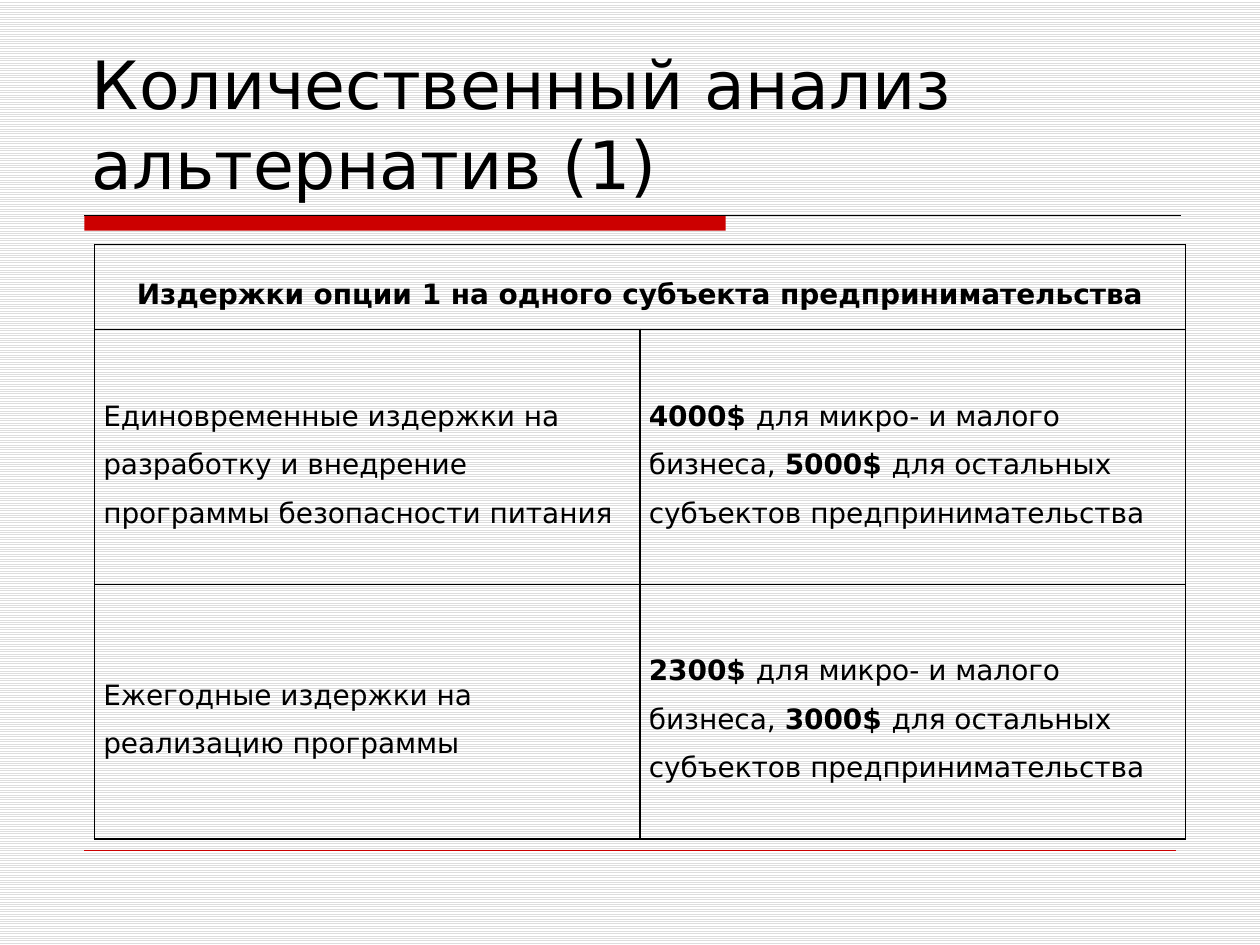
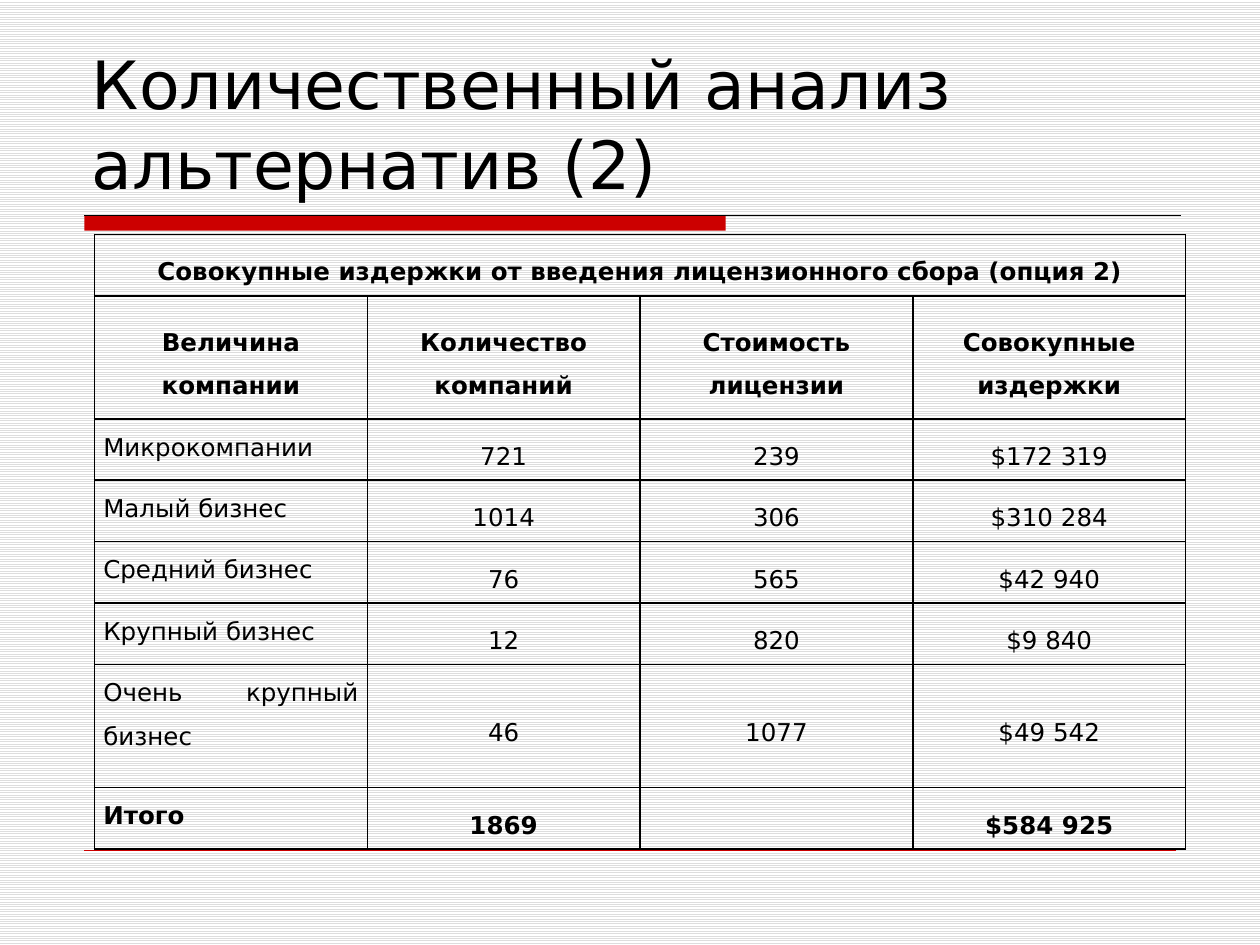
from lxml.etree import SubElement
from pptx import Presentation
from pptx.dml.color import RGBColor
from pptx.enum.dml import MSO_PATTERN
from pptx.enum.shapes import MSO_CONNECTOR, MSO_SHAPE
from pptx.enum.text import MSO_ANCHOR, MSO_AUTO_SIZE, PP_ALIGN
from pptx.oxml import parse_xml
from pptx.oxml.ns import nsdecls, qn
from pptx.util import Inches, Pt

BLACK = RGBColor(0x00, 0x00, 0x00)
WHITE = RGBColor(0xFF, 0xFF, 0xFF)
RED = RGBColor(0xCC, 0x00, 0x00)
STRIPE = RGBColor(0xDD, 0xDD, 0xDD)

FONT = "DejaVu Sans"
MARGIN = Inches(0.67)
BAND_TOP = Inches(1.71)
TABLE_LEFT = Inches(0.75)
TABLE_WIDTH = Inches(8.66)

TITLE_PLACE = {"left": Inches(0.63), "top": Inches(0.33), "width": Inches(8.75), "height": Inches(1.33)}
TITLE_FRAME = {"vertical_anchor": MSO_ANCHOR.BOTTOM, "auto_size": MSO_AUTO_SIZE.NONE, "word_wrap": True}
TITLE_FONT = {"name": FONT, "size": Pt(38), "bold": False}
CELL_MARGINS = {
    "margin_left": Inches(0.07),
    "margin_right": Inches(0.07),
    "margin_top": 0,
    "margin_bottom": 0,
}
PLAIN_TABLE = {"first_row": False, "horz_banding": False}
RULES = [
    (BAND_TOP, Inches(9.37), BLACK, 0.75),
    (Inches(6.75), Inches(9.33), RED, 0.25),
]

CENTERED = (PP_ALIGN.CENTER, MSO_ANCHOR.MIDDLE)
LEFT = (PP_ALIGN.LEFT, MSO_ANCHOR.MIDDLE)
JUSTIFIED = (PP_ALIGN.JUSTIFY, MSO_ANCHOR.TOP)

SLIDES = [
    {
        "title": "Количественный анализ альтернатив (1)",
        "top": 1.94,
        "height": 4.72,
        "shares": [1, 3, 3],
        "size": 16,
        "header_rows": 1,
        "label_style": LEFT,
        "value_style": LEFT,
        "rows": [
            ["*Издержки опции 1 на одного субъекта предпринимательства*", ""],
            [
                "Единовременные издержки на разработку и внедрение программы безопасности питания",
                "*4000$ *для микро- и малого бизнеса, *5000$ *для остальных субъектов предпринимательства",
            ],
            [
                "Ежегодные издержки на реализацию программы",
                "*2300$ *для микро- и малого бизнеса, *3000$ *для остальных субъектов предпринимательства",
            ],
        ],
    },
    {
        "title": "Количественный анализ альтернатив (2)",
        "top": 1.86,
        "height": 4.88,
        "shares": [1, 2, 1, 1, 1, 1, 2, 1],
        "size": 14,
        "header_rows": 2,
        "label_style": JUSTIFIED,
        "value_style": CENTERED,
        "rows": [
            ["*Совокупные издержки от введения лицензионного сбора (опция 2)*", "", "", ""],
            ["*Величина компании*", "*Количество компаний*", "*Стоимость лицензии*", "*Совокупные издержки*"],
            ["Микрокомпании", "721", "239", "$172 319"],
            ["Малый бизнес", "1014", "306", "$310 284"],
            ["Средний бизнес", "76", "565", "$42 940"],
            ["Крупный бизнес", "12", "820", "$9 840"],
            ["Очень крупный бизнес", "46", "1077", "$49 542"],
            ["*Итого*", "*1869*", "", "*$584 925*"],
        ],
    },
]


def apply(target, values):
    for name, value in values.items():
        setattr(target, name, value)


def add_borders(cell):
    properties = cell._tc.get_or_add_tcPr()
    for side in ("lnL", "lnR", "lnT", "lnB"):
        properties.append(parse_xml(
            f'<a:{side} {nsdecls("a")} w="{Pt(1)}"><a:solidFill>'
            f'<a:srgbClr val="{BLACK}"/></a:solidFill></a:{side}>'
        ))


deck = Presentation()
deck.slide_width, deck.slide_height = Inches(10), Inches(7.5)

backdrop = deck.slide_master.background.fill
backdrop.patterned()
backdrop.pattern = MSO_PATTERN.LIGHT_HORIZONTAL
backdrop.fore_color.rgb = STRIPE
backdrop.back_color.rgb = WHITE

for content in SLIDES:
    page = deck.slides.add_slide(deck.slide_layouts[5])

    band = page.shapes.add_shape(MSO_SHAPE.RECTANGLE, MARGIN, BAND_TOP, Inches(5.09), Inches(0.12))
    band.shadow.inherit = False
    band.fill.solid()
    band.fill.fore_color.rgb = RED
    band.line.fill.background()

    for height, right, color, weight in RULES:
        rule = page.shapes.add_connector(MSO_CONNECTOR.STRAIGHT, MARGIN, height, right, height)
        rule.line.color.rgb = color
        rule.line.width = Pt(weight)
        SubElement(rule._element.spPr, qn("a:effectLst"))

    title = page.shapes.title
    apply(title, TITLE_PLACE)
    apply(title.text_frame, TITLE_FRAME)
    title.text_frame.text = content["title"]
    para = title.text_frame.paragraphs[0]
    para.alignment = PP_ALIGN.LEFT
    apply(para.runs[0].font, TITLE_FONT)
    para.runs[0].font.color.rgb = BLACK

    rows, shares = content["rows"], content["shares"]
    column_count = len(rows[0])
    table_height = Inches(content["height"])
    table = page.shapes.add_table(
        len(rows), column_count, TABLE_LEFT, Inches(content["top"]), TABLE_WIDTH, table_height
    ).table
    apply(table, PLAIN_TABLE)
    for column in table.columns:
        column.width = TABLE_WIDTH // column_count
    for row, share in zip(table.rows, shares):
        row.height = table_height * share // sum(shares)
    table.cell(0, 0).merge(table.cell(0, column_count - 1))

    for row_index, texts in enumerate(rows):
        for column_index, text in enumerate(texts):
            cell = table.cell(row_index, column_index)
            style = content["value_style"] if column_index else content["label_style"]
            if row_index < content["header_rows"]:
                style = CENTERED
            apply(cell, CELL_MARGINS)
            add_borders(cell)
            cell.fill.background()
            para = cell.text_frame.paragraphs[0]
            para.alignment, cell.vertical_anchor = style
            para.line_spacing = 1.5
            for part_index, part in enumerate(text.split("*")):
                if part:
                    span = para.add_run()
                    span.text = part
                    apply(span.font, {"name": FONT, "size": Pt(content["size"]), "bold": part_index % 2 == 1})
                    span.font.color.rgb = BLACK

deck.save("out.pptx")
